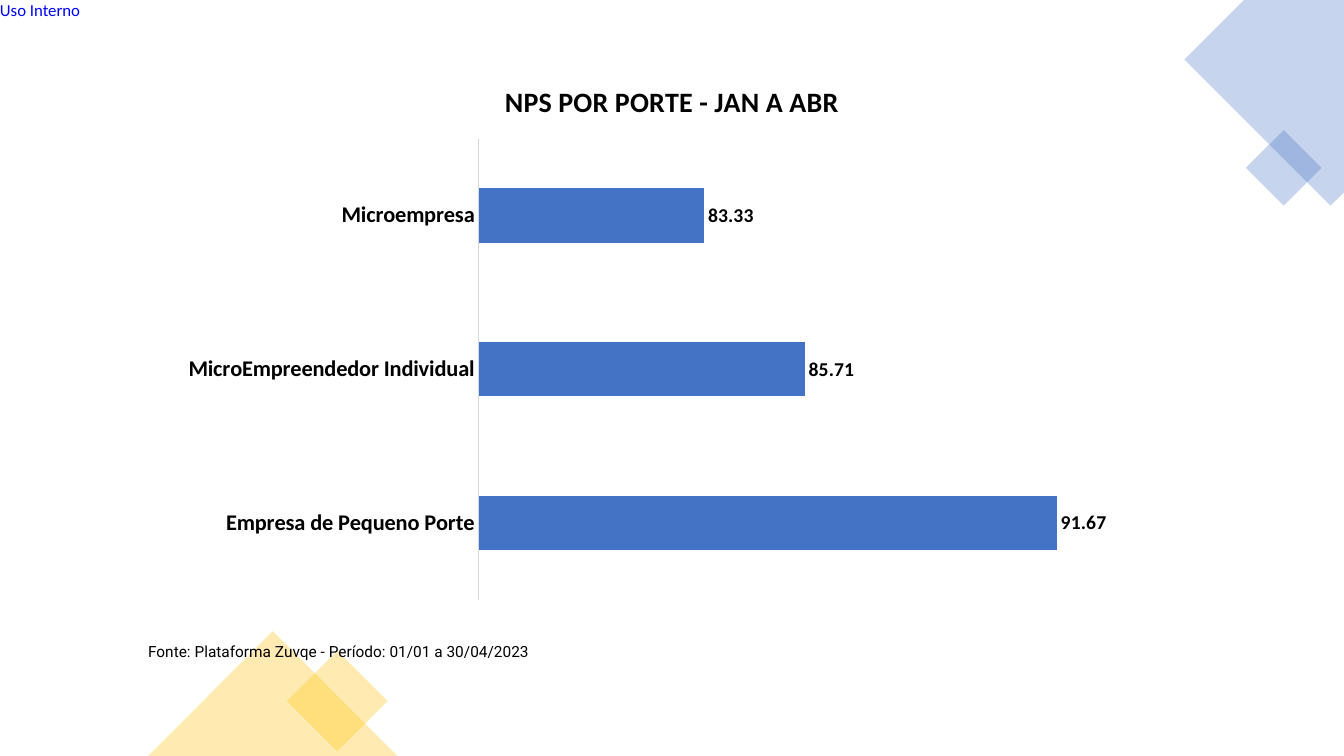
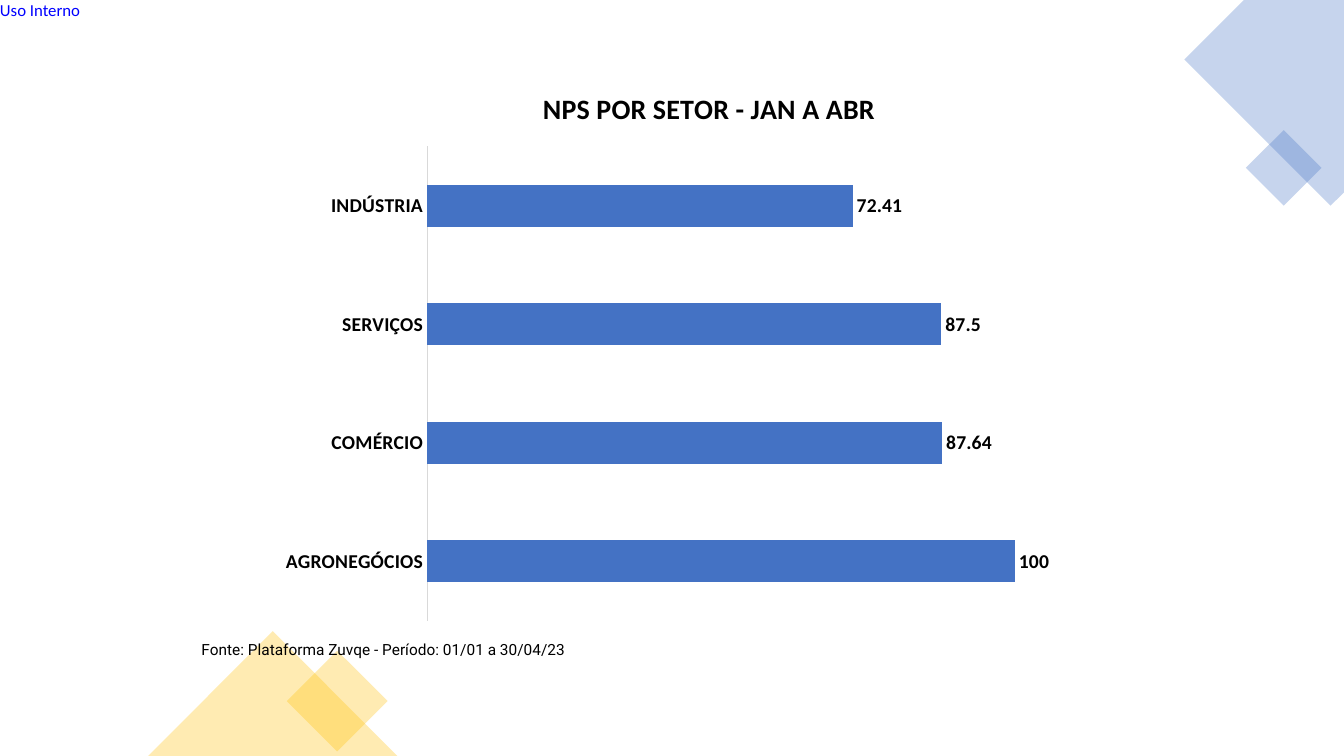
from lxml.etree import SubElement
from pptx import Presentation
from pptx.chart.data import CategoryChartData
from pptx.dml.color import RGBColor
from pptx.enum.chart import XL_CHART_TYPE, XL_LABEL_POSITION, XL_TICK_MARK
from pptx.enum.shapes import MSO_SHAPE
from pptx.oxml.ns import qn
from pptx.util import Inches, Pt

WIDE, HIGH = Inches(13.333), Inches(7.5)
BLUE = RGBColor(0x44, 0x72, 0xC4)
GOLD = RGBColor(0xFF, 0xC0, 0x00)
LINK = RGBColor(0x00, 0x00, 0xFF)
BLACK = RGBColor(0x00, 0x00, 0x00)
GREY = RGBColor(0xD9, 0xD9, 0xD9)
BODY, NOTE = "Calibri", "Roboto"


def share(*parts):
    sides = (WIDE, HIGH) * 2
    return [int(side * part / 100) for side, part in zip(sides, parts)]


def style(font, size, color=BLACK, bold=False, name=BODY):
    font.size, font.bold, font.name = Pt(size), bold, name
    font.color.rgb = color


def tint(shape, color):
    shape.shadow.inherit = False
    shape.line.fill.background()
    shape.fill.solid()
    shape.fill.fore_color.rgb = color
    node = shape.element.spPr.find(".//" + qn("a:srgbClr"))
    SubElement(node, qn("a:alpha"), val="30000")


def add_form(slide, kind, color, *box):
    tint(slide.shapes.add_shape(kind, *share(*box)), color)


def add_corner(slide, color, *points):
    start, *rest = [share(*point) for point in points]
    pen = slide.shapes.build_freeform(*start)
    pen.add_line_segments(rest, close=True)
    tint(pen.convert_to_shape(), color)


def add_text(slide, text, box, size, color, name, inset=True):
    frame = slide.shapes.add_textbox(*share(*box)).text_frame
    frame.word_wrap = inset
    if not inset:
        frame.margin_left = frame.margin_right = 0
        frame.margin_top = frame.margin_bottom = 0
    line = frame.paragraphs[0]
    line.text = text
    style(line.font, size, color, name=name)


def add_decor(slide):
    add_text(slide, "Uso Interno", (0, 0, 6.3, 2.67), 12, LINK, BODY, False)
    add_corner(slide, BLUE, (100, 0), (92.55, 0), (88.13, 7.87),
               (99, 27.2), (100, 25.47))
    add_form(slide, MSO_SHAPE.DIAMOND, BLUE, 92.7, 17.2, 5.63, 10)
    add_form(slide, MSO_SHAPE.DIAMOND, GOLD, 21.34, 86.07, 7.5, 13.33)
    add_form(slide, MSO_SHAPE.ISOSCELES_TRIANGLE, GOLD,
             11.03, 83.47, 18.53, 16.53)


def add_bars(slide, title, scores, box, size, low, high):
    data = CategoryChartData()
    data.categories = list(scores)
    data.add_series("NPS", list(scores.values()))
    chart = slide.shapes.add_chart(
        XL_CHART_TYPE.BAR_CLUSTERED, *share(*box), data).chart
    style(chart.font, 10)
    chart.has_legend = False

    chart.has_title = True
    head = chart.chart_title.text_frame
    head.text = title
    style(head.paragraphs[0].font, 20, bold=True)
    chart.chart_title.include_in_layout = False

    cats = chart.category_axis
    cats.major_tick_mark = cats.minor_tick_mark = XL_TICK_MARK.NONE
    cats.format.line.color.rgb = GREY
    cats.format.line.width = Pt(0.75)
    style(cats.tick_labels.font, size, bold=True)

    vals = chart.value_axis
    vals.visible = vals.has_major_gridlines = False
    vals.minimum_scale, vals.maximum_scale = low, high

    plot = chart.plots[0]
    plot.gap_width = 182
    plot.vary_by_categories = False
    fill = plot.series[0].format.fill
    fill.solid()
    fill.fore_color.rgb = BLUE
    plot.has_data_labels = True
    labels = plot.data_labels
    labels.show_value = True
    labels.position = XL_LABEL_POSITION.OUTSIDE_END
    style(labels.font, 14, bold=True)


def add_page(deck, note, spot, *bars):
    slide = deck.slides.add_slide(deck.slide_layouts[6])
    add_decor(slide)
    add_text(slide, note, (*spot, 33.83, 3.87), 11, BLACK, NOTE)
    add_bars(slide, *bars)


def main():
    deck = Presentation()
    deck.slide_width, deck.slide_height = WIDE, HIGH
    add_page(
        deck, "Fonte: Plataforma Zuvqe - Período: 01/01 a 30/04/2023",
        (10.28, 84.27), "NPS POR PORTE - JAN A ABR",
        {"Empresa de Pequeno Porte": 91.67,
         "MicroEmpreendedor Individual": 85.71,
         "Microempresa": 83.33},
        (12.53, 7.93, 74.93, 72.87), 16, 78, 94)
    add_page(
        deck, "Fonte: Plataforma Zuvqe - Período: 01/01 a 30/04/23",
        (14.25, 84), "NPS POR SETOR - JAN A ABR",
        {"AGRONEGÓCIOS": 100, "COMÉRCIO": 87.64,
         "SERVIÇOS": 87.5, "INDÚSTRIA": 72.41},
        (19.95, 8.87, 65.63, 74.73), 14, 0, 120)
    deck.save("out.pptx")


if __name__ == "__main__":
    main()
